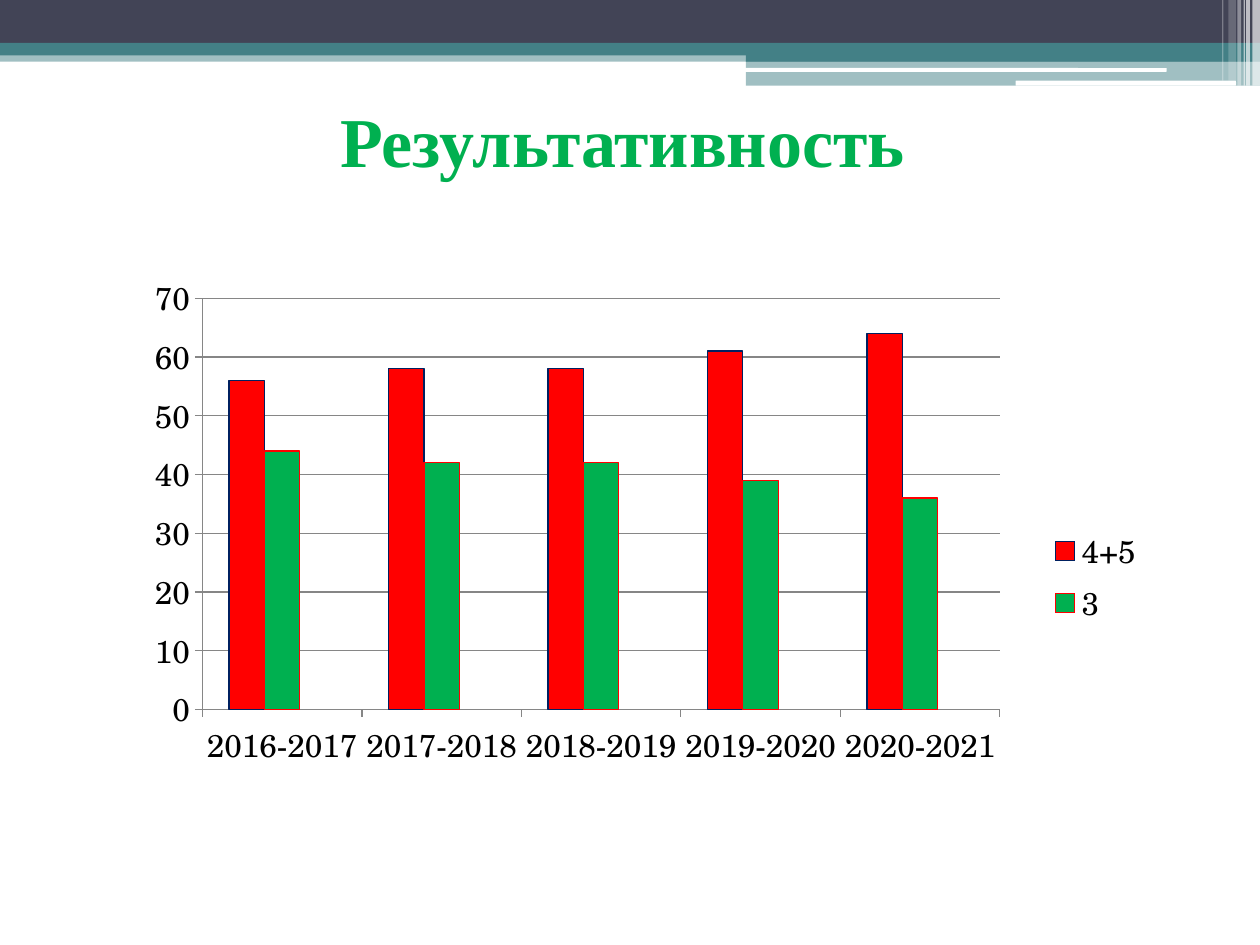
from lxml import etree
from pptx import Presentation
from pptx import util as u
from pptx.chart import data as chart_data
from pptx.dml import color
from pptx.enum import chart as kinds, shapes, text
from pptx.oxml import ns

# The slide is a grid of 1000 columns by 750 rows
COLUMNS, ROWS = 1000, 750
CELL = u.Inches(0.01)

TEAL, SLATE, WHITE, GREEN, RED, GREY = (
    "438086", "424456", "FFFFFF", "00B050", "FF0000", "868686")

# left, top, width, height, colour, opacity in percent
BANDS = [
    (0, 40, 1000, 9, TEAL, 50),
    (0, 0, 1000, 34, SLATE, 100),
    (0, 34, 1000, 10, TEAL, 100),
    (592, 39, 408, 10, TEAL, 100),
    (592, 48, 408, 20, TEAL, 50),
]
RULES = [(591, 54, 335, 3), (806, 64, 175, 4)]
# left, width, height, opacity in percent
STRIPES = [(994, 6, 68, 65), (989, 3, 68, 65), (987, 1, 68, 60),
           (982, 3, 68, 40), (975, 6, 64, 20), (970, 1, 64, 30)]

YEARS = [f"{year}-{year + 1}" for year in range(2016, 2021)]
# name, values, fill, outline
SERIES = [
    ("4+5", (56, 58, 58, 61, 64), RED, "002060"),
    ("3", (44, 42, 42, 39, 36), GREEN, RED),
    ("Series 3", (None,) * 5, "A04DA3", None),
]
PLOT_SHARES = {"x": 0.093, "y": 0.054, "w": 0.758, "h": 0.658}


def rgb(code):
    return color.RGBColor.from_string(code)


def cells(*counts):
    return [count * CELL for count in counts]


def apply(target, values):
    for name, value in values.items():
        setattr(target, name, value)


def paint(fill, code):
    fill.solid()
    fill.fore_color.rgb = rgb(code)


def add_child(parent, tag, **attributes):
    return etree.SubElement(parent, ns.qn(tag), attributes)


def add_bar(page, area, code, opacity=100, kind=shapes.MSO_SHAPE.RECTANGLE):
    bar = page.shapes.add_shape(kind, *cells(*area))
    bar.shadow.inherit = False
    bar.line.fill.background()
    paint(bar.fill, code)
    if opacity < 100:
        tint = bar.fill._xPr.find(".//" + ns.qn("a:srgbClr"))
        add_child(tint, "a:alpha", val=str(opacity * 1000))


def add_title(page, area, words):
    box = page.shapes.add_textbox(*cells(*area))
    apply(box.text_frame, {"word_wrap": True,
                           "vertical_anchor": text.MSO_ANCHOR.MIDDLE})
    para = box.text_frame.paragraphs[0]
    para.alignment = text.PP_ALIGN.CENTER
    span = para.add_run()
    span.text = words
    apply(span.font, {"name": "Times New Roman", "size": u.Pt(40), "bold": True})
    span.font.color.rgb = rgb(GREEN)


def style_line(line, code, width=0.75):
    line.color.rgb = rgb(code)
    line.width = u.Pt(width)


def fix_plot_area(chart):
    area = chart._chartSpace.chart.plotArea
    for old in area.findall(ns.qn("c:layout")):
        area.remove(old)
    layout = etree.Element(ns.qn("c:layout"))
    area.insert(0, layout)
    manual = add_child(layout, "c:manualLayout")
    add_child(manual, "c:layoutTarget", val="inner")
    for side in "xy":
        add_child(manual, f"c:{side}Mode", val="edge")
    for side, share in PLOT_SHARES.items():
        add_child(manual, f"c:{side}", val=str(share))


def hide_legend_entry(legend, index):
    entry = etree.Element(ns.qn("c:legendEntry"))
    add_child(entry, "c:idx", val=str(index))
    add_child(entry, "c:delete", val="1")
    legend._element.find(ns.qn("c:legendPos")).addnext(entry)


def add_results_chart(page, area):
    source = chart_data.CategoryChartData()
    source.categories = YEARS
    for name, values, *_ in SERIES:
        source.add_series(name, values)
    chart = page.shapes.add_chart(
        kinds.XL_CHART_TYPE.COLUMN_CLUSTERED, *cells(*area), source).chart
    apply(chart, {"has_title": False, "has_legend": True})
    apply(chart.font, {"name": "TeX Gyre Schola", "size": u.Pt(18)})
    chart.font.color.rgb = rgb("000000")

    # Columns
    plot = chart.plots[0]
    apply(plot, {"gap_width": 150, "overlap": 0, "vary_by_categories": False})
    for series, (_, _, fill, outline) in zip(plot.series, SERIES):
        paint(series.format.fill, fill)
        if outline:
            style_line(series.format.line, outline)

    # Axes and gridlines
    for axis in (chart.category_axis, chart.value_axis):
        apply(axis, {"major_tick_mark": kinds.XL_TICK_MARK.OUTSIDE,
                     "minor_tick_mark": kinds.XL_TICK_MARK.NONE})
        style_line(axis.format.line, GREY)
    apply(chart.value_axis, {"has_major_gridlines": True, "minimum_scale": 0,
                             "maximum_scale": 70, "major_unit": 10})
    style_line(chart.value_axis.major_gridlines.format.line, GREY)

    # Legend
    apply(chart.legend, {"position": kinds.XL_LEGEND_POSITION.RIGHT,
                         "include_in_layout": False})
    hide_legend_entry(chart.legend, len(SERIES) - 1)
    fix_plot_area(chart)


def main():
    deck = Presentation()
    apply(deck, {"slide_width": COLUMNS * CELL, "slide_height": ROWS * CELL})
    page = deck.slides.add_slide(deck.slide_layouts[6])

    # Header decoration
    for *area, code, opacity in BANDS:
        add_bar(page, area, code, opacity)
    for area in RULES:
        add_bar(page, area, WHITE, kind=shapes.MSO_SHAPE.ROUNDED_RECTANGLE)
    for left, width, height, opacity in STRIPES:
        add_bar(page, (left, 0, width, height), WHITE, opacity)

    # Content
    add_title(page, (51, 52, 900, 117), "Результативность ")
    add_results_chart(page, (83, 210, 835, 496))
    deck.save("out.pptx")


if __name__ == "__main__":
    main()
